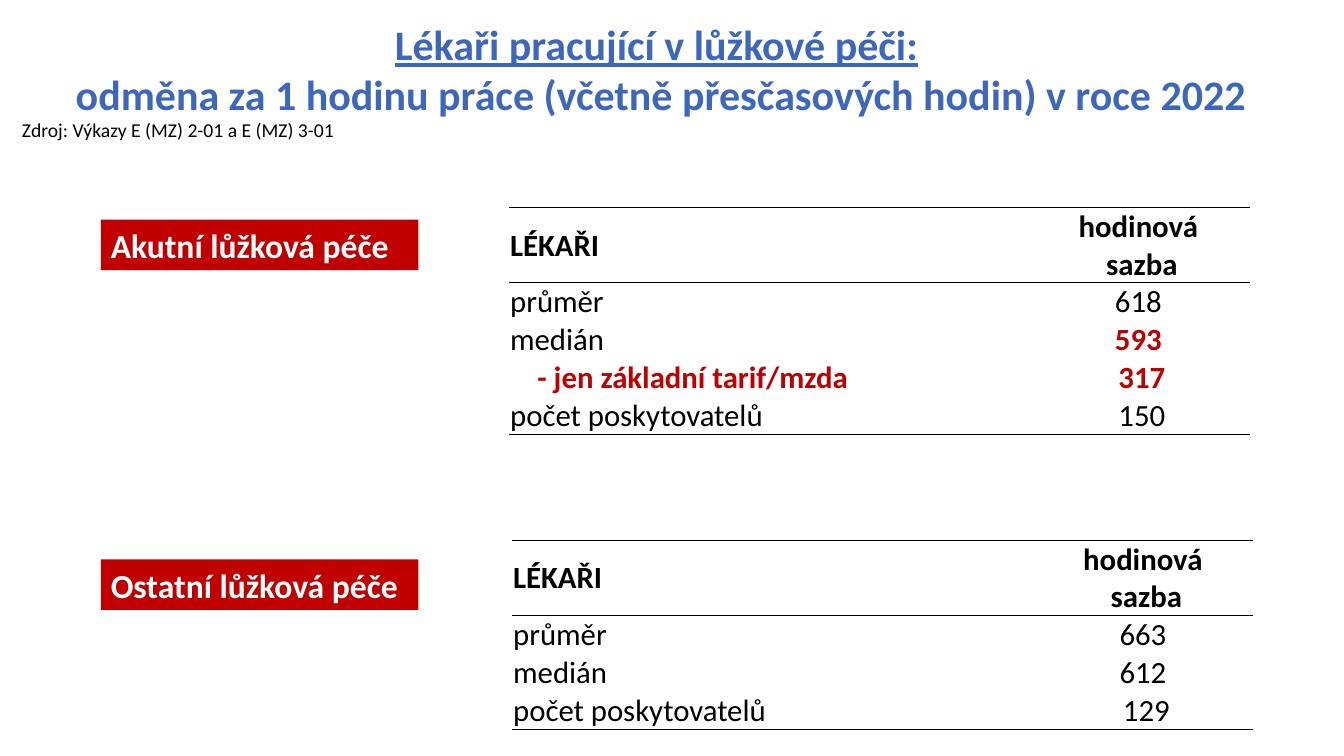
from lxml.etree import SubElement
from pptx import Presentation
from pptx.dml.color import RGBColor
from pptx.enum.shapes import MSO_SHAPE
from pptx.enum.text import MSO_ANCHOR, MSO_AUTO_SIZE, PP_ALIGN
from pptx.oxml.ns import qn
from pptx.util import Inches, Pt

COLORS = {"title": "3D67BC", "accent": "C00000", "text": "000000", "light": "FFFFFF"}
NO_STYLE = "{2D5ABB26-0587-4C30-8999-92F81FD0307C}"
ROW_HEIGHT = 0.37
HEADER = ("LÉKAŘI", "hodinová \nsazba")
INDENTED_LABEL = "- jen základní tarif/mzda"


def format_font(font, size, color, bold=False):
    font.name = "Calibri"
    font.size = Pt(size)
    font.bold = bold
    font.color.rgb = RGBColor.from_string(COLORS[color])


def add_border(cell, side):
    """Draw a thin line on one side of the cell: lnT or lnB."""
    line = SubElement(cell._tc.get_or_add_tcPr(), qn(f"a:{side}"), w=str(Pt(1)))
    fill = SubElement(line, qn("a:solidFill"))
    SubElement(fill, qn("a:srgbClr"), val=COLORS["text"])


presentation = Presentation()
presentation.slide_width = Inches(13.33)
presentation.slide_height = Inches(7.5)
slide = presentation.slides.add_slide(presentation.slide_layouts[5])

# Title
title = slide.shapes.title
title.left, title.top = Inches(0), Inches(0.33)
title.width, title.height = Inches(13.12), Inches(0.71)
title.text_frame.auto_size = MSO_AUTO_SIZE.NONE
title.text_frame.vertical_anchor = MSO_ANCHOR.MIDDLE
paragraph = title.text_frame.paragraphs[0]
paragraph.alignment = PP_ALIGN.CENTER
paragraph.line_spacing = 1.0
paragraph.text = "Lékaři pracující v lůžkové péči:"
paragraph.add_run().text = " "
paragraph.add_line_break()
paragraph.add_run().text = "odměna za 1 hodinu práce (včetně přesčasových hodin) v roce 2022"
for run in paragraph.runs:
    format_font(run.font, 30, "title", bold=True)
paragraph.runs[0].font.underline = True

# Source note
source = slide.shapes.add_textbox(Inches(0.12), Inches(1.12), Inches(3.94), Inches(0.34))
source.text_frame.word_wrap = True
source.text_frame.text = "Zdroj: Výkazy E (MZ) 2-01 a E (MZ) 3-01"
format_font(source.text_frame.paragraphs[0].runs[0].font, 14, "text")

# Care types: label, label top, table left and top, column widths, rows, highlighted cells
care_types = [
    ("Akutní lůžková péče", 2.18, 5.05, 2.06, (5.2, 2.15),
     [HEADER, ("průměr", "618 "), ("medián", "593 "), (INDENTED_LABEL, "317"),
      ("počet poskytovatelů", "150")],
     {(2, 1), (3, 0), (3, 1)}),
    ("Ostatní lůžková péče", 5.55, 5.08, 5.36, (5.23, 2.12),
     [HEADER, ("průměr", "663 "), ("medián", "612 "), ("počet poskytovatelů", "129")],
     set()),
]

for label_text, label_top, left, top, widths, rows, highlighted in care_types:
    table_shape = slide.shapes.add_table(
        len(rows), 2, Inches(left), Inches(top),
        Inches(sum(widths)), Inches(ROW_HEIGHT * (len(rows) + 1)))
    table = table_shape.table
    table.first_row = table.horz_banding = False
    table._tbl.tblPr.find(qn("a:tableStyleId")).text = NO_STYLE
    for column, width in zip(table.columns, widths):
        column.width = Inches(width)

    for row_index, values in enumerate(rows):
        is_header = row_index == 0
        table.rows[row_index].height = Inches(ROW_HEIGHT * (2 if is_header else 1))
        for column_index, value in enumerate(values):
            cell = table.cell(row_index, column_index)
            cell.text_frame.text = value
            cell.vertical_anchor = MSO_ANCHOR.MIDDLE
            cell.margin_left = cell.margin_right = cell.margin_top = Inches(0.01)
            cell.margin_bottom = 0
            if is_header:
                add_border(cell, "lnT")
            if is_header or row_index == len(rows) - 1:
                add_border(cell, "lnB")
            cell.fill.background()
            is_highlighted = (row_index, column_index) in highlighted
            for paragraph in cell.text_frame.paragraphs:
                paragraph.alignment = PP_ALIGN.CENTER if column_index else PP_ALIGN.LEFT
                if value == INDENTED_LABEL:
                    paragraph._p.get_or_add_pPr().set("marL", str(Inches(0.27)))
                format_font(paragraph.runs[0].font, 22,
                            "accent" if is_highlighted else "text",
                            bold=is_header or is_highlighted)

    label = slide.shapes.add_shape(
        MSO_SHAPE.RECTANGLE, Inches(1), Inches(label_top), Inches(3.15), Inches(0.5))
    label.shadow.inherit = False
    label.fill.solid()
    label.fill.fore_color.rgb = RGBColor.from_string(COLORS["accent"])
    label.line.fill.background()
    label.text_frame.word_wrap = True
    label.text_frame.text = label_text
    paragraph = label.text_frame.paragraphs[0]
    paragraph.alignment = PP_ALIGN.LEFT
    format_font(paragraph.runs[0].font, 24, "light", bold=True)

presentation.save("out.pptx")
